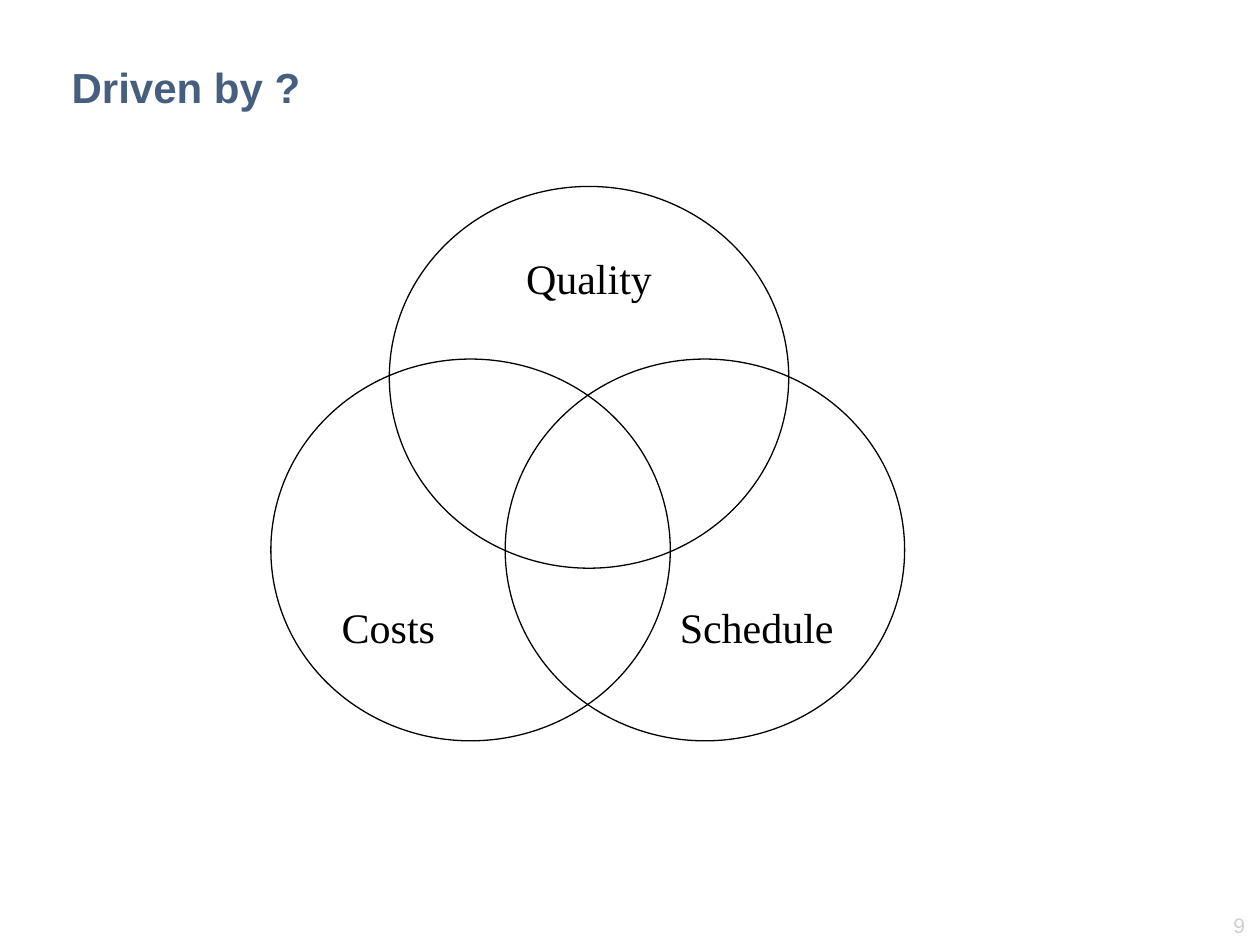
"""Build a slide with three overlapping circles: quality, costs and schedule."""
from dataclasses import dataclass

from pptx import Presentation
from pptx import util as u
from pptx.dml.color import RGBColor
from pptx.enum import shapes, text

WIDE, HIGH = 3.17, 3.03
LEFT, MID, RIGHT = text.PP_ALIGN.LEFT, text.PP_ALIGN.CENTER, text.PP_ALIGN.RIGHT
TOP, CENTER = text.MSO_ANCHOR.TOP, text.MSO_ANCHOR.MIDDLE


@dataclass
class Style:
    size: int
    font: str
    color: str
    bold: bool = False


@dataclass
class Ring:
    label: str
    left: float
    top: float
    inset: float
    align: text.PP_ALIGN


TITLE = Style(24, "Arial", "465F7F", True)
LABEL = Style(24, "Times New Roman", "000000")
NUMBER = Style(12, "Arial", "D0CECE")
RINGS = [
    Ring("Quality", 3.09, 1.48, 0.08, MID),
    Ring("Costs", 2.15, 2.85, 1.48, LEFT),
    Ring("Schedule", 4.01, 2.85, 1.48, RIGHT),
]


def paint(code: str) -> RGBColor:
    return RGBColor.from_string(code)


def write(shape, words: str, style: Style, align, anchor=TOP, inset: float = 0.05) -> None:
    frame = shape.text_frame
    frame.text = words
    frame.word_wrap = True
    frame.vertical_anchor = anchor
    frame.margin_top = u.Inches(inset)
    line = frame.paragraphs[0]
    line.alignment = align
    font = line.runs[0].font
    font.size = u.Pt(style.size)
    font.name = style.font
    font.bold = style.bold
    font.color.rgb = paint(style.color)


def add_text(slide, box: tuple[float, ...], words: str, style: Style, align, anchor=TOP) -> None:
    shape = slide.shapes.add_textbox(*map(u.Inches, box))
    write(shape, words, style, align, anchor)


def add_ring(slide, ring: Ring) -> None:
    box = (ring.left, ring.top, WIDE, HIGH)
    shape = slide.shapes.add_shape(shapes.MSO_SHAPE.OVAL, *map(u.Inches, box))
    shape.shadow.inherit = False
    shape.fill.background()
    shape.line.color.rgb = paint("000000")
    shape.line.width = u.Pt(0.75)
    write(shape, ring.label, LABEL, ring.align, inset=ring.inset)


def main() -> None:
    deck = Presentation()
    deck.slide_width, deck.slide_height = u.Inches(10), u.Inches(7.5)
    slide = deck.slides.add_slide(deck.slide_layouts[6])
    add_text(slide, (9.16, 7.19, 0.82, 0.3), "9", NUMBER, RIGHT)
    add_text(slide, (0.47, 0.41, 8.47, 0.56), "Driven by ?", TITLE, LEFT, CENTER)
    for ring in RINGS:
        add_ring(slide, ring)
    deck.save("out.pptx")


if __name__ == "__main__":
    main()
